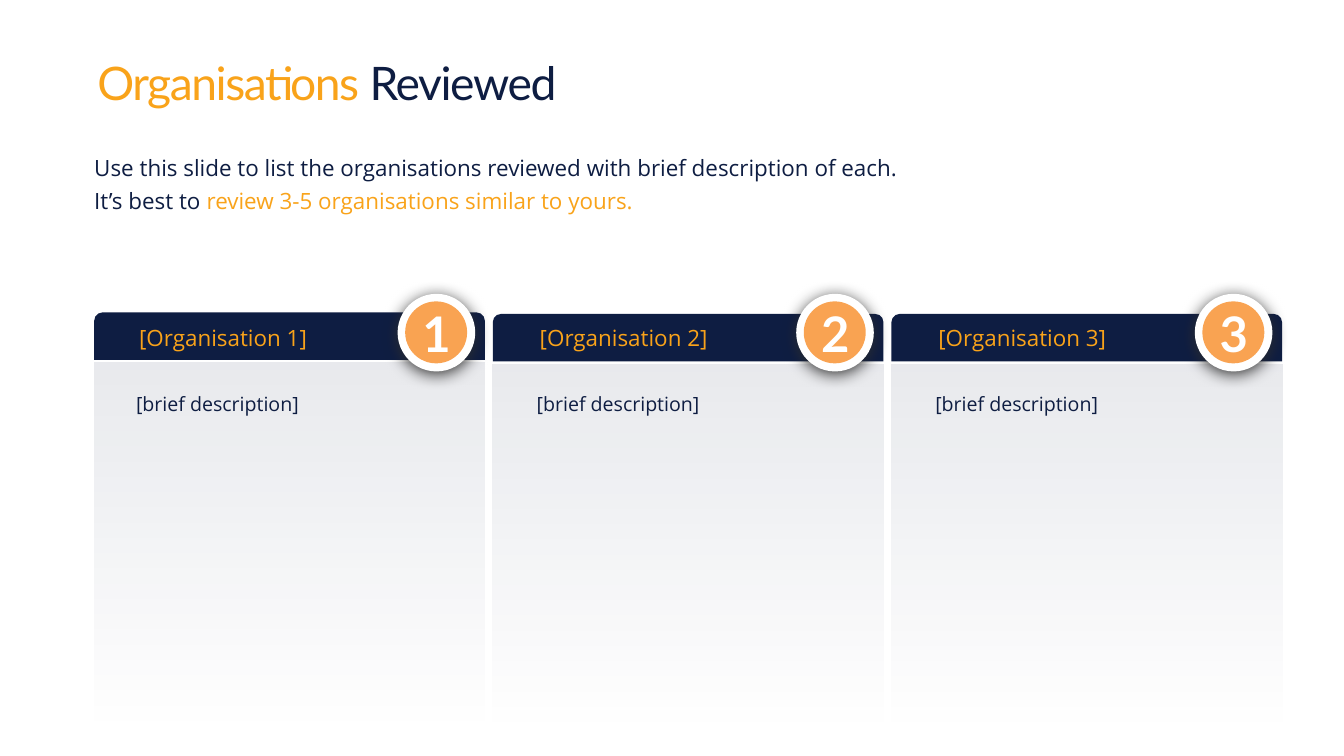
"""Builds the slide that lists the organisations reviewed."""
from lxml import etree
from pptx import Presentation
from pptx.dml.color import RGBColor
from pptx.enum.shapes import MSO_SHAPE
from pptx.enum.text import MSO_ANCHOR, MSO_AUTO_SIZE, PP_ALIGN
from pptx.oxml.ns import qn
from pptx.util import Inches, Pt

RECTANGLE = MSO_SHAPE.RECTANGLE
TAB = MSO_SHAPE.ROUND_2_SAME_RECTANGLE
OVAL = MSO_SHAPE.OVAL
TOP, MIDDLE = MSO_ANCHOR.TOP, MSO_ANCHOR.MIDDLE
LEFT, CENTER = PP_ALIGN.LEFT, PP_ALIGN.CENTER
GROW, FIXED = MSO_AUTO_SIZE.SHAPE_TO_FIT_TEXT, MSO_AUTO_SIZE.NONE

NAVY = RGBColor(0x0E, 0x1D, 0x42)
AMBER = RGBColor(0xF9, 0xA3, 0x1A)
ORANGE = RGBColor(0xF9, 0xA3, 0x52)
WHITE = RGBColor(0xFF, 0xFF, 0xFF)
SHADE = RGBColor(0x2F, 0x2F, 0x2F)

HEADING_FONT, BODY_FONT = "Lato", "Open Sans"
FIRST_LEFT, COLUMN_STEP, COLUMN_WIDTH = 1.87, 7.91, 7.75
COLUMNS = [(6.2, 0.83), (6.23, 0.87), (6.23, 0.87)]


class SlideBuilder:
    """Holds the style and the current slide."""

    def __init__(self, page):
        self.page = page

    def place(self, item, left, top, width, height):
        """Moves and sizes an item, in inches."""
        item.left, item.top = Inches(left), Inches(top)
        item.width, item.height = Inches(width), Inches(height)

    def fill_text(self, box, lines, size, font=BODY_FONT, anchor=TOP,
                  inset=0.0, align=LEFT, bold=False, before=0, spacing=None,
                  fit=GROW):
        """Fills a box with lines, each a list of (text, colour) runs."""
        frame = box.text_frame
        frame.word_wrap, frame.auto_size = True, fit
        frame.vertical_anchor = anchor
        frame.margin_left = frame.margin_right = Inches(inset)
        frame.margin_top = frame.margin_bottom = Inches(inset)
        for index, line in enumerate(lines):
            para = frame.add_paragraph() if index else frame.paragraphs[0]
            para.alignment, para.space_before = align, Pt(before)
            para.line_spacing = spacing
            for text, color in line:
                span = para.add_run()
                span.text = text
                span.font.name, span.font.size = font, Pt(size)
                span.font.bold, span.font.color.rgb = bold, color

    def title(self, runs):
        """Fills the title placeholder with tightened letters."""
        box = self.page.shapes.title
        self.place(box, 1.87, 1.24, 24.54, 1.26)
        self.fill_text(box, [runs], 66, HEADING_FONT, inset=0.06, spacing=0.8,
                       fit=FIXED)
        for para in box.text_frame.paragraphs:
            for span in para.runs:
                span.font._element.set("spc", "-200")

    def intro(self, lines):
        """Fills the body placeholder with plain lines."""
        box = self.page.placeholders[1]
        self.place(box, 1.87, 3.08, 22.93, 1.22)
        self.fill_text(box, lines, 32, anchor=MIDDLE, before=12, spacing=0.9)
        for para in box.text_frame.paragraphs:
            properties = para._p.get_or_add_pPr()
            properties.set("marL", "0")
            properties.set("indent", "0")
            etree.SubElement(properties, qn("a:buNone"))

    def text(self, bounds, text, color, size, parent=None, **style):
        """Adds a one-line text box."""
        shapes = (parent or self.page).shapes
        box = shapes.add_textbox(*map(Inches, bounds))
        self.fill_text(box, [[(text, color)]], size, **style)

    def shape(self, kind, bounds, color, parent=None):
        """Adds a filled shape without line or shadow."""
        shapes = (parent or self.page).shapes
        item = shapes.add_shape(kind, *map(Inches, bounds))
        item.shadow.inherit = False
        item.fill.solid()
        item.fill.fore_color.rgb = color
        item.line.fill.background()
        return item

    def panel(self, left, top):
        """Adds a panel that fades out downwards."""
        item = self.shape(RECTANGLE, (left, top, COLUMN_WIDTH, 7.53), NAVY)
        item.fill.gradient()
        item.fill.gradient_angle = 270
        for stop in item.fill.gradient_stops:
            stop.color.rgb = NAVY
        colors = item._element.spPr.iter(qn("a:srgbClr"))
        for color, alpha in zip(list(colors), ("10000", "0")):
            etree.SubElement(color, qn("a:alpha"), val=alpha)

    def header(self, left, top):
        """Adds a column header with rounded top corners."""
        item = self.shape(TAB, (left, top, COLUMN_WIDTH, 0.94), NAVY)
        item.adjustments[0], item.adjustments[1] = 0.17, 0

    def badge(self, left, number):
        """Adds a grouped, numbered disc with a soft shadow."""
        group = self.page.shapes.add_group_shape()
        ring = self.shape(OVAL, (left, 5.83, 1.54, 1.54), WHITE, group)
        effects = ring._element.spPr.find(qn("a:effectLst"))
        shadow = etree.SubElement(
            effects, qn("a:outerShdw"), blurRad=str(Pt(23)), dist=str(Pt(4)),
            dir="5400000", algn="ctr", rotWithShape="0")
        color = etree.SubElement(shadow, qn("a:srgbClr"), val=str(SHADE))
        etree.SubElement(color, qn("a:alpha"), val="92000")
        self.shape(OVAL, (left + 0.15, 5.98, 1.23, 1.23), ORANGE, group)
        self.text((left + 0.34, 5.96, 0.87, 1.28), str(number), WHITE, 70,
                  group, font=HEADING_FONT, anchor=MIDDLE, inset=0.06,
                  align=CENTER, bold=True)

    def column(self, number, top, indent):
        """Adds one organisation with its header, panel and badge."""
        left = FIRST_LEFT + (number - 1) * COLUMN_STEP
        self.panel(left, top + 1)
        self.header(left, top)
        self.text((left + indent, 6.38, 5.04, 0.64),
                  f"[Organisation {number}]", AMBER, 32,
                  anchor=MIDDLE, inset=0.06)
        self.text((left + indent, 7.78, 6.58, 0.47),
                  "[brief description]", NAVY, 28, before=12)
        self.badge(left + 6.02, number)


def main():
    """Creates the deck and saves it."""
    deck = Presentation()
    deck.slide_width, deck.slide_height = Inches(26.67), Inches(15)
    builder = SlideBuilder(deck.slides.add_slide(deck.slide_layouts[1]))
    builder.title([("Organisations ", AMBER), ("Reviewed", NAVY)])
    builder.intro([
        [("Use this slide to list the organisations reviewed "
          "with brief description of each.", NAVY)],
        [("It’s best to ", NAVY),
         ("review 3-5 organisations similar to yours.", AMBER)],
    ])
    for number, (top, indent) in enumerate(COLUMNS, start=1):
        builder.column(number, top, indent)
    deck.save("out.pptx")


if __name__ == "__main__":
    main()
